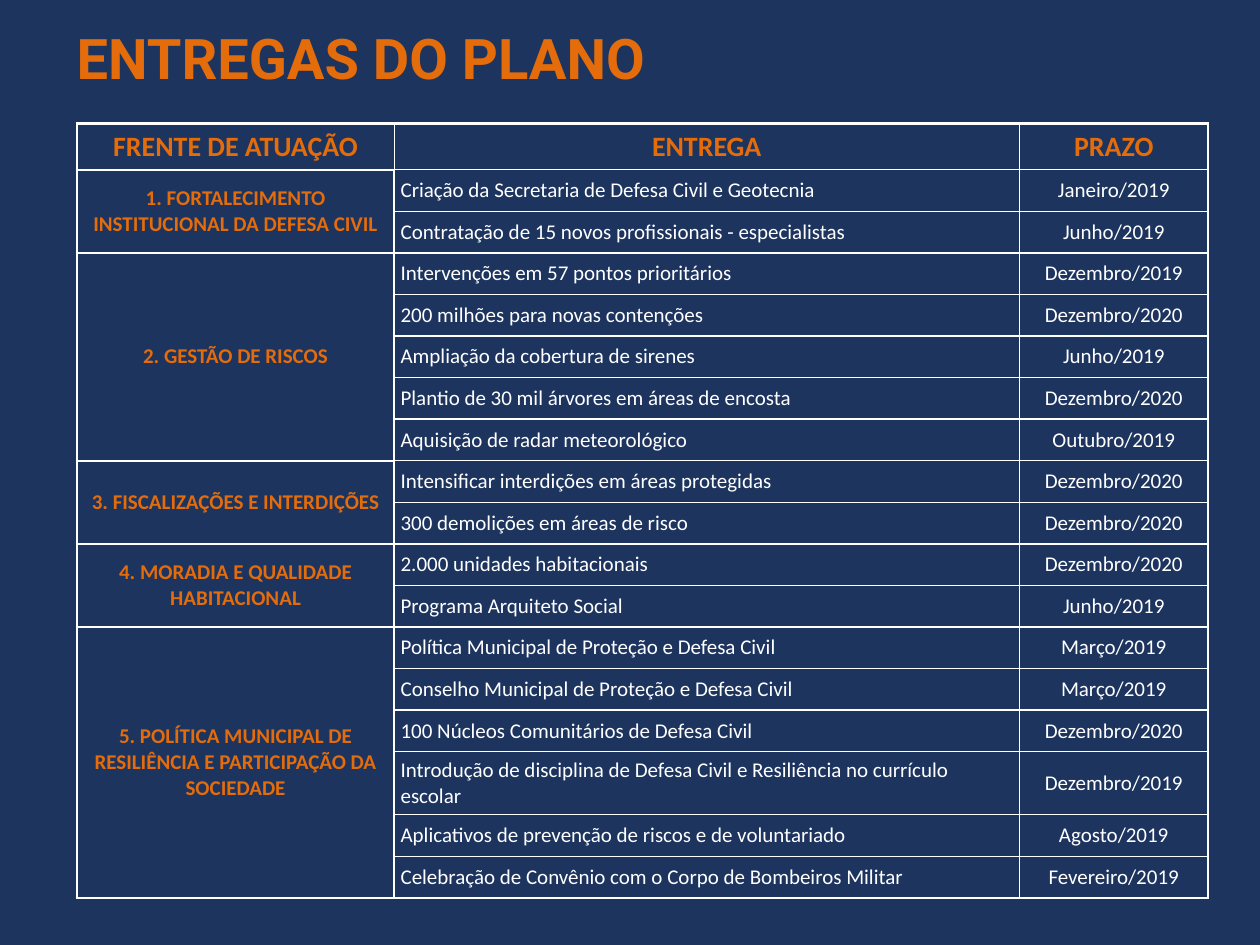
from pptx import Presentation
from pptx.dml.color import RGBColor
from pptx.enum.shapes import MSO_SHAPE
from pptx.enum.text import MSO_ANCHOR, MSO_AUTO_SIZE, PP_ALIGN
from pptx.oxml.ns import qn
from pptx.util import Inches, Pt
from lxml.etree import SubElement

NAVY = RGBColor(0x1D, 0x34, 0x5F)
ORANGE = RGBColor(0xE4, 0x6C, 0x0A)
WHITE = RGBColor(0xFF, 0xFF, 0xFF)

THIN, THICK = 1, 1.5
COLUMN_WIDTHS = (2.52, 4.96, 1.5)
HEADER_HEIGHT, ROW_HEIGHT, TALL_ROW_HEIGHT = 0.34, 0.33, 0.47
ONE_LINE_LIMIT = 60

HEADINGS = ("FRENTE DE ATUAÇÃO", "ENTREGA", "PRAZO")
FRONTS = [
    ("1. FORTALECIMENTO INSTITUCIONAL DA DEFESA CIVIL", [
        ("Criação da Secretaria de Defesa Civil e Geotecnia", "Janeiro/2019"),
        ("Contratação de 15 novos profissionais - especialistas", "Junho/2019"),
    ]),
    ("2. GESTÃO DE RISCOS", [
        ("Intervenções em 57 pontos prioritários", "Dezembro/2019"),
        ("200 milhões para novas contenções", "Dezembro/2020"),
        ("Ampliação da cobertura de sirenes", "Junho/2019"),
        ("Plantio de 30 mil árvores em áreas de encosta", "Dezembro/2020"),
        ("Aquisição de radar meteorológico", "Outubro/2019"),
    ]),
    ("3. FISCALIZAÇÕES E INTERDIÇÕES", [
        ("Intensificar interdições em áreas protegidas", "Dezembro/2020"),
        ("300 demolições em áreas de risco", "Dezembro/2020"),
    ]),
    ("4. MORADIA E QUALIDADE HABITACIONAL", [
        ("2.000 unidades habitacionais", "Dezembro/2020"),
        ("Programa Arquiteto Social", "Junho/2019"),
    ]),
    ("5. POLÍTICA MUNICIPAL DE RESILIÊNCIA E PARTICIPAÇÃO DA SOCIEDADE", [
        ("Política Municipal de Proteção e Defesa Civil", "Março/2019"),
        ("Conselho Municipal de Proteção e Defesa Civil", "Março/2019"),
        ("100 Núcleos Comunitários de Defesa Civil", "Dezembro/2020"),
        ("Introdução de disciplina de Defesa Civil e Resiliência no currículo escolar",
         "Dezembro/2019"),
        ("Aplicativos de prevenção de riscos e de voluntariado", "Agosto/2019"),
        ("Celebração de Convênio com o Corpo de Bombeiros Militar", "Fevereiro/2019"),
    ]),
]


def write_text(text_frame, text, size=12, color=WHITE, bold=False,
               font="Calibri", align=PP_ALIGN.LEFT):
    paragraph = text_frame.paragraphs[0]
    paragraph.alignment = align
    run = paragraph.add_run()
    run.text = text
    run.font.name = font
    run.font.size = Pt(size)
    run.font.bold = bold
    run.font.color.rgb = color


def add_background(slide):
    shape = slide.shapes.add_shape(
        MSO_SHAPE.RECTANGLE, 0, 0, Inches(10.02), Inches(7.53))
    shape.shadow.inherit = False
    shape.fill.solid()
    shape.fill.fore_color.rgb = NAVY
    shape.line.fill.background()


def add_title(slide, text):
    box = slide.shapes.add_textbox(
        Inches(0.51), Inches(0.14), Inches(8.66), Inches(0.84))
    box.text_frame.word_wrap = True
    box.text_frame.auto_size = MSO_AUTO_SIZE.SHAPE_TO_FIT_TEXT
    write_text(box.text_frame, text, size=32, color=ORANGE, bold=True, font="Roboto")


def style_cell(cell, left=THIN, top=THIN, right=THIN, bottom=THIN):
    """Draw white borders of the given point widths, then fill the cell."""
    properties = cell._tc.get_or_add_tcPr()
    for tag, width in (("lnL", left), ("lnR", right), ("lnT", top), ("lnB", bottom)):
        line = SubElement(properties, qn(f"a:{tag}"), w=str(Pt(width)))
        fill = SubElement(line, qn("a:solidFill"))
        SubElement(fill, qn("a:srgbClr"), val=str(WHITE))
    cell.fill.solid()
    cell.fill.fore_color.rgb = NAVY


def set_body_layout(cell):
    cell.vertical_anchor = MSO_ANCHOR.MIDDLE
    cell.margin_left = cell.margin_right = Inches(0.05)
    cell.margin_top = cell.margin_bottom = Inches(0.05)


def fill_header(table):
    last = len(HEADINGS) - 1
    for column, heading in enumerate(HEADINGS):
        cell = table.cell(0, column)
        write_text(cell.text_frame, heading, size=16, color=ORANGE, bold=True,
                   align=PP_ALIGN.CENTER)
        style_cell(cell, top=THICK,
                   left=THICK if column == 0 else THIN,
                   right=THICK if column == last else THIN,
                   bottom=THICK if column == 0 else THIN)


def fill_front(table, first_row, name, deliveries):
    """Fill one merged front cell and the deliveries beside it."""
    last_row = first_row + len(deliveries) - 1
    front = table.cell(first_row, 0)
    front.merge(table.cell(last_row, 0))
    set_body_layout(front)
    write_text(front.text_frame, name, color=ORANGE, bold=True, align=PP_ALIGN.CENTER)

    for row, (delivery, deadline) in enumerate(deliveries, first_row):
        style_cell(table.cell(row, 0), THICK, THICK, THICK, THICK)
        bottom = THICK if row == len(table.rows) - 1 else THIN
        delivery_cell, deadline_cell = table.cell(row, 1), table.cell(row, 2)
        for cell in (delivery_cell, deadline_cell):
            set_body_layout(cell)
        write_text(delivery_cell.text_frame, delivery)
        write_text(deadline_cell.text_frame, deadline, align=PP_ALIGN.CENTER)
        style_cell(delivery_cell, left=THICK, bottom=bottom)
        style_cell(deadline_cell, right=THICK, bottom=bottom)


def add_delivery_table(slide):
    heights = [HEADER_HEIGHT] + [
        TALL_ROW_HEIGHT if len(delivery) > ONE_LINE_LIMIT else ROW_HEIGHT
        for _, deliveries in FRONTS for delivery, _ in deliveries]
    table = slide.shapes.add_table(
        len(heights), len(COLUMN_WIDTHS), Inches(0.61), Inches(0.98),
        Inches(sum(COLUMN_WIDTHS)), Inches(sum(heights))).table
    table.horz_banding = False
    for column, width in zip(table.columns, COLUMN_WIDTHS):
        column.width = Inches(width)
    for row, height in zip(table.rows, heights):
        row.height = Inches(height)

    fill_header(table)
    first_row = 1
    for name, deliveries in FRONTS:
        fill_front(table, first_row, name, deliveries)
        first_row += len(deliveries)


def main():
    presentation = Presentation()
    presentation.slide_width = Inches(10)
    presentation.slide_height = Inches(7.5)
    slide = presentation.slides.add_slide(presentation.slide_layouts[6])
    add_background(slide)
    add_title(slide, "ENTREGAS DO PLANO")
    add_delivery_table(slide)
    presentation.save("out.pptx")


if __name__ == "__main__":
    main()
